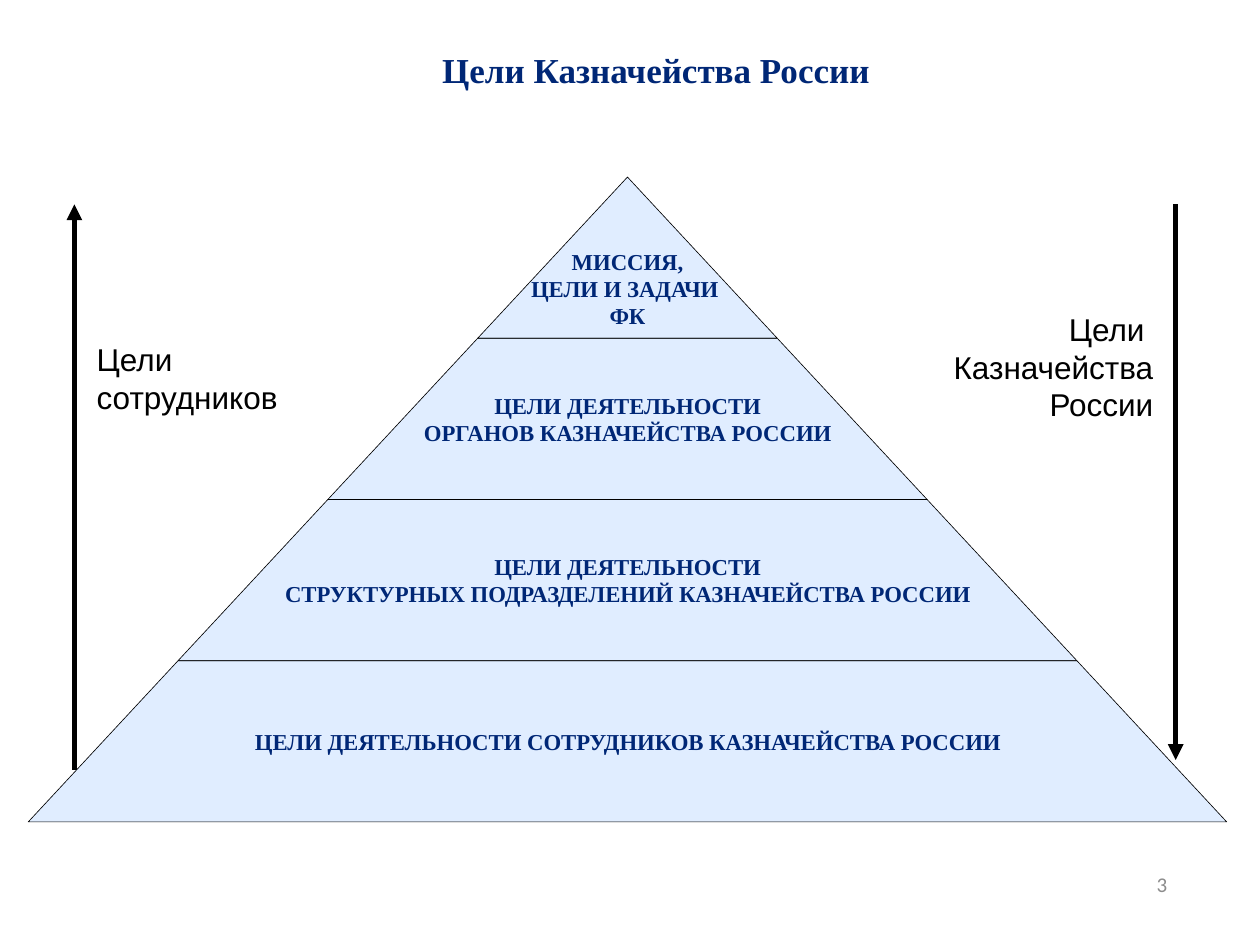
"""Build the pyramid slide of Treasury goals."""
from lxml import etree
from pptx import Presentation
from pptx import util as u
from pptx.dml import color
from pptx.enum import shapes, text
from pptx.oxml import ns

NAVY, PALE, BLACK, GREY = "002776", "C3DDFF", "000000", "8C8C8C"
SERIF, SANS, NUMBER_FONT = "Times New Roman", "Arial", "Calibri"
LEFT, CENTER, RIGHT = text.PP_ALIGN.LEFT, text.PP_ALIGN.CENTER, text.PP_ALIGN.RIGHT
TOP, MIDDLE, BOTTOM = (text.MSO_ANCHOR.TOP, text.MSO_ANCHOR.MIDDLE,
                       text.MSO_ANCHOR.BOTTOM)

TIERS = [
    ("МИССИЯ,\vЦЕЛИ И ЗАДАЧИ \nФК", BOTTOM),
    ("ЦЕЛИ ДЕЯТЕЛЬНОСТИ\vОРГАНОВ КАЗНАЧЕЙСТВА РОССИИ", MIDDLE),
    ("ЦЕЛИ ДЕЯТЕЛЬНОСТИ\vСТРУКТУРНЫХ ПОДРАЗДЕЛЕНИЙ КАЗНАЧЕЙСТВА РОССИИ", MIDDLE),
    ("ЦЕЛИ ДЕЯТЕЛЬНОСТИ СОТРУДНИКОВ КАЗНАЧЕЙСТВА РОССИИ", MIDDLE),
]
APEX_X, APEX_Y = 12.65, 3.57
TIER_HEIGHT, TIER_SPREAD = 3.25, 3.02

ARROWS = [(1.5, 15.52, 4.12), (23.7, 4.12, 15.32)]

CAPTIONS = [
    ("Цели сотрудников", (1.7, 6.73, 4.8, 1.78), LEFT, TOP, (SANS, 18, BLACK, False)),
    ("Цели \vКазначейства России", (18.9, 6.12, 4.6, 2.54), RIGHT, TOP,
     (SANS, 18, BLACK, False)),
    ("3", (17.86, 17.32, 5.92, 1.02), RIGHT, MIDDLE, (NUMBER_FONT, 12, GREY, False)),
    ("Цели Казначейства России", (3.99, 0.86, 18.47, 1.12), CENTER, TOP,
     (SERIF, 20, NAVY, True)),
]


def rgb(value):
    """Turn a hex string into a colour."""
    return color.RGBColor.from_string(value)


def add_child(parent, tag, **attributes):
    """Append a DrawingML element."""
    return etree.SubElement(parent, ns.qn(tag), attributes)


def write(frame, words, align, anchor, style):
    """Put styled words into a text frame."""
    face, size, ink, bold = style
    frame.text = words
    frame.vertical_anchor = anchor
    for paragraph in frame.paragraphs:
        paragraph.alignment = align
        for run in paragraph.runs:
            run.font.name, run.font.size, run.font.bold = face, u.Pt(size), bold
            run.font.color.rgb = rgb(ink)


def add_tier(slide, level, words, anchor):
    """Draw one layer of the pyramid."""
    top, bottom = (APEX_Y + step * TIER_HEIGHT for step in (level, level + 1))
    upper, lower = level * TIER_SPREAD, (level + 1) * TIER_SPREAD
    corners = dict.fromkeys([(APEX_X - lower, bottom), (APEX_X - upper, top),
                             (APEX_X + upper, top), (APEX_X + lower, bottom)])
    start, *rest = [(u.Cm(x), u.Cm(y)) for x, y in corners]
    outline = slide.shapes.build_freeform(*start)
    outline.add_line_segments(rest, close=True)
    tier = outline.convert_to_shape()
    tier.shadow.inherit = False
    tier.fill.solid()
    tier.fill.fore_color.rgb = rgb(PALE)
    tint = tier.fill._xPr.find(ns.qn("a:solidFill"))[0]
    add_child(tint, "a:alpha", val="50000")
    tier.line.color.rgb = rgb(BLACK)
    tier.line.width = u.Pt(0.37)
    frame = tier.text_frame
    frame.word_wrap = False
    frame.margin_left = frame.margin_right = frame.margin_top = 0
    frame.margin_bottom = u.Cm(0.18) if anchor == BOTTOM else 0
    write(frame, words, CENTER, anchor, (SERIF, 13, NAVY, True))


def add_arrow(slide, x, start, end):
    """Draw a vertical arrow."""
    arrow = slide.shapes.add_connector(shapes.MSO_CONNECTOR.STRAIGHT,
                                       u.Cm(x), u.Cm(start), u.Cm(x), u.Cm(end))
    arrow.line.color.rgb = rgb(BLACK)
    arrow.line.width = u.Pt(3)
    add_child(arrow.line._get_or_add_ln(), "a:tailEnd", type="triangle")
    add_child(arrow._element.spPr, "a:effectLst")


def add_caption(slide, words, box, align, anchor, style):
    """Add a wrapped text box."""
    frame = slide.shapes.add_textbox(*map(u.Cm, box)).text_frame
    frame.word_wrap = True
    write(frame, words, align, anchor, style)


def main():
    """Assemble and save the slide."""
    deck = Presentation()
    deck.slide_width, deck.slide_height = u.Cm(25.4), u.Cm(19.05)
    slide = deck.slides.add_slide(deck.slide_layouts[6])
    for level, (words, anchor) in enumerate(TIERS):
        add_tier(slide, level, words, anchor)
    for arrow in ARROWS:
        add_arrow(slide, *arrow)
    for caption in CAPTIONS:
        add_caption(slide, *caption)
    deck.save("out.pptx")


if __name__ == "__main__":
    main()
